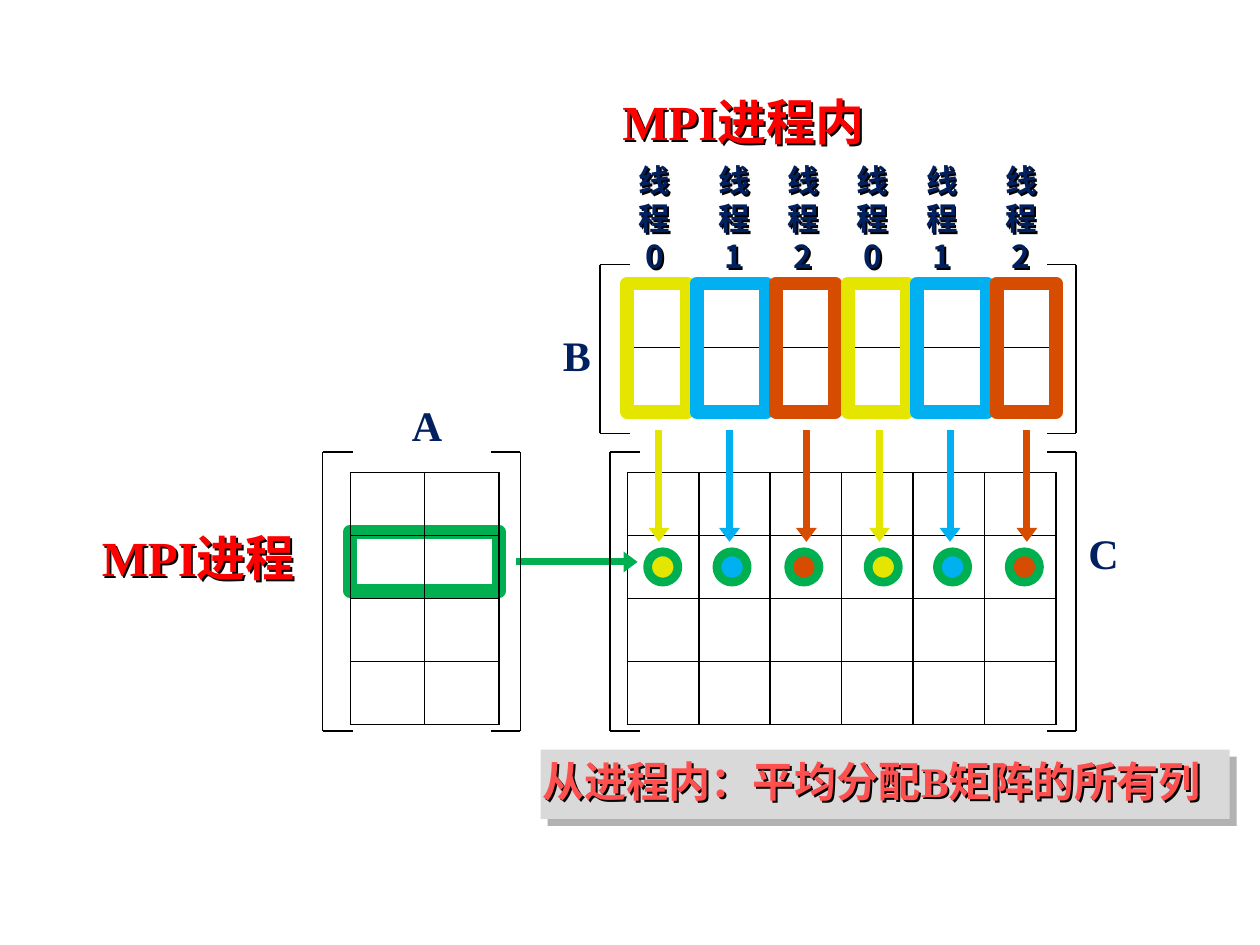
from dataclasses import dataclass

from lxml.etree import SubElement
from pptx import Presentation
from pptx.dml.color import RGBColor
from pptx.enum.shapes import MSO_CONNECTOR, MSO_SHAPE
from pptx.enum.text import PP_ALIGN
from pptx.oxml import parse_xml
from pptx.oxml.ns import nsdecls, qn
from pptx.util import Inches, Pt

COLORS = {
    "black": "000000", "gray": "D9D9D9", "shade": "B2B2B2", "navy": "002060",
    "red": "FF0000", "coral": "FF5050", "green": "00B050",
    "yellow": "E5E600", "blue": "00B0F0", "orange": "D64C00",
}
SERIF, SANS = "Times New Roman", "Noto Sans CJK SC"
PERIOD = 1.75
THREADS = 3


@dataclass
class Matrix:
    left: float
    top: float
    width: float
    height: float
    rows: int
    columns: int


@dataclass
class Bracket:
    spine: float
    tip: float
    top: float
    bottom: float


@dataclass
class Column:
    color: str
    left: float
    width: float
    dot: float
    arrow: float


@dataclass
class Label:
    text: str
    left: float
    top: float
    width: float
    height: float
    size: int
    color: str
    font: str = SERIF
    shadow: bool = True
    centered: bool = False


MATRIX_A = Matrix(2.78, 3.75, 1.18, 2, 4, 2)
MATRIX_B = Matrix(4.98, 2.25, 3.4, 1.02, 2, 6)
MATRIX_C = Matrix(4.98, 3.75, 3.4, 2, 4, 6)
BRACKETS = [
    Bracket(2.56, 2.8, 3.59, 5.8), Bracket(4.13, 3.9, 3.59, 5.8),
    Bracket(4.84, 5.08, 3.59, 5.8), Bracket(8.54, 8.31, 3.59, 5.8),
    Bracket(4.76, 5, 2.1, 3.44), Bracket(8.54, 8.31, 2.1, 3.44),
]
COLUMNS = [
    Column("yellow", 4.98, 0.47, 5.14, 5.23),
    Column("blue", 5.53, 0.55, 5.69, 5.79),
    Column("orange", 6.16, 0.47, 6.26, 6.4),
]
THREAD_LEFTS = [4.92, 5.55, 6.1, 6.65, 7.2, 7.83]
LABELS = [
    Label("A", 3.17, 3.12, 0.63, 0.5, 24, "navy", shadow=False),
    Label("B", 4.37, 2.57, 0.47, 0.5, 24, "navy", shadow=False),
    Label("C", 8.54, 4.14, 0.63, 0.5, 24, "navy", shadow=False),
    Label("MPI进程", 0.71, 4.14, 1.9, 0.57, 28, "red"),
    Label("MPI进程内", 4.84, 0.68, 2.52, 0.57, 28, "red"),
    Label("从进程内：平均分配B矩阵的所有列", 4.21, 5.95, 5.5, 0.5, 24, "coral"),
] + [
    Label(f"线\v程\v{index % THREADS}", left, 1.23, 0.55, 1.01, 18, "navy", SANS, centered=True)
    for index, left in enumerate(THREAD_LEFTS)
]


def rgb(name: str) -> RGBColor:
    return RGBColor.from_string(COLORS[name])


def add_shadow(shape, name: str, distance: float) -> None:
    """Cast a hard shadow to the lower right; an unfilled box casts that of its text."""
    shape.shadow.inherit = False
    properties = shape._element.spPr
    properties.replace(properties.find(qn("a:effectLst")), parse_xml(
        f'<a:effectLst {nsdecls("a")}><a:outerShdw dist="{Pt(distance)}" dir="2700000" '
        f'algn="tl" rotWithShape="0"><a:srgbClr val="{COLORS[name]}"/></a:outerShdw></a:effectLst>'
    ))


def add_matrix(page, matrix: Matrix) -> None:
    table = page.shapes.add_table(
        matrix.rows, matrix.columns, Inches(matrix.left), Inches(matrix.top),
        Inches(matrix.width), Inches(matrix.height),
    ).table
    table.first_row = table.horz_banding = False
    for cell in table.iter_cells():
        properties = cell._tc.get_or_add_tcPr()
        for side in ("lnL", "lnR", "lnT", "lnB"):
            border = SubElement(properties, qn(f"a:{side}"), w=str(Pt(1)))
            fill = SubElement(border, qn("a:solidFill"))
            SubElement(fill, qn("a:srgbClr"), val=COLORS["black"])
        cell.fill.background()


def add_figure(page, kind: MSO_SHAPE, box: tuple[float, ...], fill: str | None = None,
               line: str | None = None, weight: float = 0):
    """Add a preset shape; a fill or line of None is left empty."""
    figure = page.shapes.add_shape(kind, *map(Inches, box))
    figure.shadow.inherit = False
    if fill:
        figure.fill.solid()
        figure.fill.fore_color.rgb = rgb(fill)
    else:
        figure.fill.background()
    if line:
        figure.line.color.rgb = rgb(line)
        figure.line.width = Pt(weight)
    else:
        figure.line.fill.background()
    return figure


def add_line(shapes, start: tuple[float, float], end: tuple[float, float],
             color: str, weight: float, arrow: bool = False) -> None:
    line = shapes.add_connector(MSO_CONNECTOR.STRAIGHT, *map(Inches, start + end))
    line.line.color.rgb = rgb(color)
    line.line.width = Pt(weight)
    if arrow:
        outline = line.line._get_or_add_ln()
        outline.set("cap", "sq")
        SubElement(outline, qn("a:tailEnd"), type="triangle", w="med", len="sm")
    SubElement(line._element.spPr, qn("a:effectLst"))


def add_bracket(page, bracket: Bracket) -> None:
    group = page.shapes.add_group_shape()
    top, bottom = (bracket.spine, bracket.top), (bracket.spine, bracket.bottom)
    add_line(group.shapes, top, bottom, "black", 1)
    for corner in (top, bottom):
        add_line(group.shapes, corner, (bracket.tip, corner[1]), "black", 1)


def add_label(page, label: Label) -> None:
    box = page.shapes.add_textbox(
        *map(Inches, (label.left, label.top, label.width, label.height)))
    box.text_frame.word_wrap = True
    if label.shadow:
        add_shadow(box, "black", 1.5)
    para = box.text_frame.paragraphs[0]
    para.text = label.text
    para.line_spacing = Pt(label.size * 1.2)
    para.alignment = PP_ALIGN.CENTER if label.centered else PP_ALIGN.LEFT
    for span in para.runs:
        span.font.size = Pt(label.size)
        span.font.bold = True
        span.font.color.rgb = rgb(label.color)
        span.font.name = label.font
        SubElement(span.font._element, qn("a:ea"), typeface=SANS)


def add_column(page, column: Column, shift: float) -> None:
    """Frame a column of B and point it at its result in C."""
    add_figure(page, MSO_SHAPE.RECTANGLE,
               (column.left + shift, MATRIX_B.top, column.width, MATRIX_B.height),
               line=column.color, weight=8)
    add_figure(page, MSO_SHAPE.OVAL, (column.dot + shift, 4.38, 0.24, 0.24),
               column.color, "green", 5)
    x = column.arrow + shift
    add_line(page.shapes, (x, 3.44), (x, 4.3), column.color, 4, arrow=True)


def main() -> None:
    deck = Presentation()
    deck.slide_width, deck.slide_height = Inches(10), Inches(7.5)
    page = deck.slides.add_slide(deck.slide_layouts[6])
    add_matrix(page, MATRIX_B)
    banner = add_figure(page, MSO_SHAPE.RECTANGLE, (4.29, 5.95, 5.47, 0.55), "gray")
    add_shadow(banner, "shade", 5.7)
    add_figure(page, MSO_SHAPE.RECTANGLE, (2.78, 4.22, 1.18, 0.47), line="green", weight=8)
    add_matrix(page, MATRIX_C)
    add_matrix(page, MATRIX_A)
    add_line(page.shapes, (4.12, 4.46), (5.06, 4.46), "green", 4, arrow=True)
    for shift in (0, PERIOD):
        for column in COLUMNS:
            add_column(page, column, shift)
    for bracket in BRACKETS:
        add_bracket(page, bracket)
    for label in LABELS:
        add_label(page, label)
    deck.save("out.pptx")


if __name__ == "__main__":
    main()
